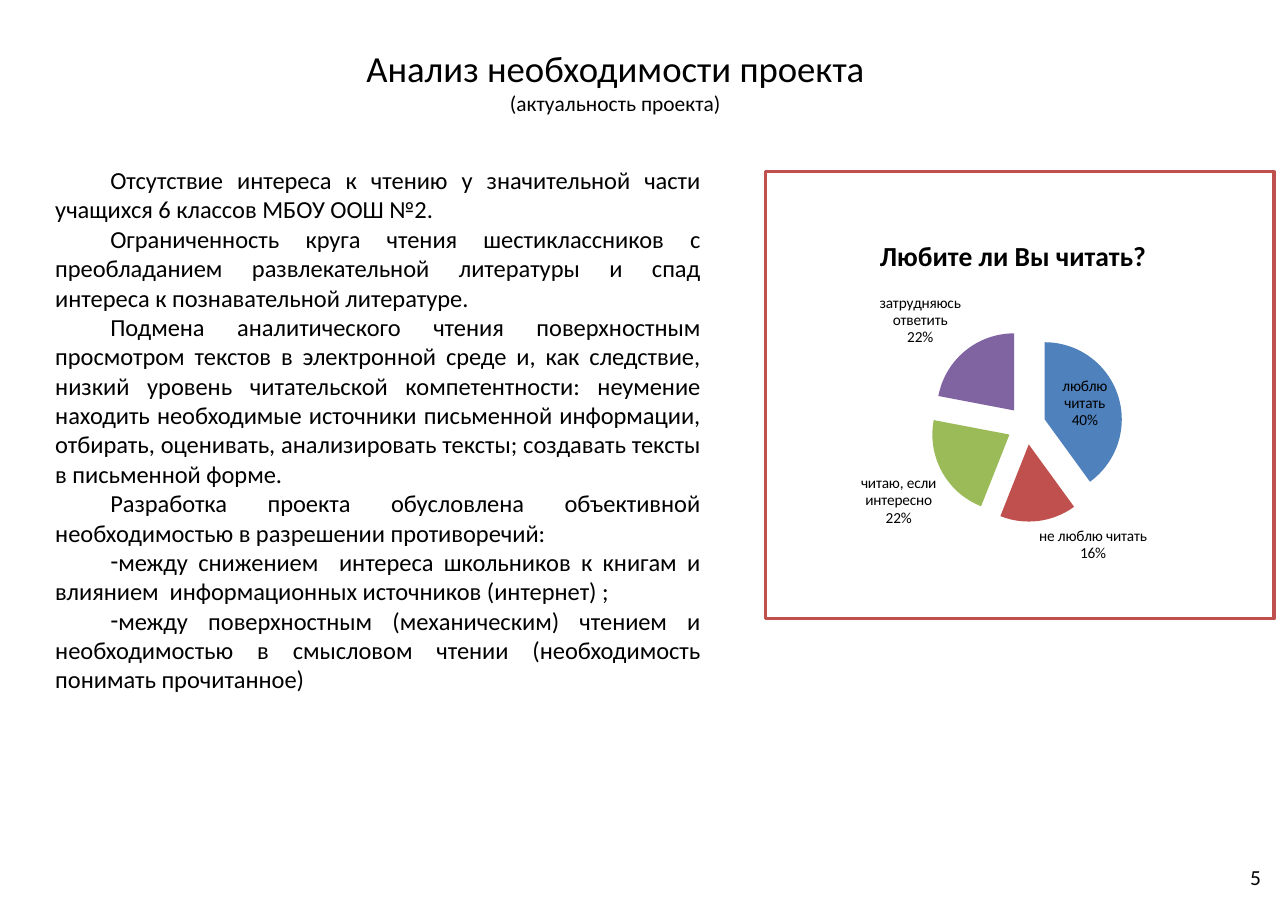
from lxml import etree
from pptx import Presentation
from pptx import util as u
from pptx.chart import data
from pptx.dml.color import RGBColor
from pptx.enum import chart as charts, shapes, text
from pptx.oxml import ns

FONT = "Calibri"
COLORS = {"text": "000000", "panel": "FFFFFF", "frame": "C0504D"}
ANSWERS = [
    ("люблю читать", 40, "4F81BD"),
    ("не люблю читать", 16, "C0504D"),
    ("читаю, если интересно", 22, "9BBB59"),
    ("затрудняюсь ответить", 22, "8064A2"),
]
REASONS = [
    "Отсутствие интереса к чтению у значительной части учащихся 6 классов МБОУ ООШ №2.",
    "Ограниченность круга чтения шестиклассников с преобладанием развлекательной "
    "литературы и спад интереса к познавательной литературе.",
    "Подмена аналитического чтения поверхностным просмотром текстов в электронной среде "
    "и, как следствие, низкий уровень читательской компетентности: неумение находить "
    "необходимые источники письменной информации, отбирать, оценивать, анализировать "
    "тексты; создавать тексты в письменной форме.",
    "Разработка проекта обусловлена объективной необходимостью в разрешении противоречий:",
]
CONTRADICTIONS = [
    "между снижением  интереса школьников к книгам и влиянием  информационных "
    "источников (интернет) ;",
    "между поверхностным (механическим) чтением и необходимостью в смысловом чтении "
    "(необходимость понимать прочитанное)",
]


def style(font, size):
    font.name, font.size = FONT, u.Pt(size)
    font.color.rgb = RGBColor.from_string(COLORS["text"])


def set_layout(parent, index, **fractions):
    """Place a chart part by fractions of the chart area."""
    for old in parent.findall(ns.qn("c:layout")):
        parent.remove(old)
    layout = etree.Element(ns.qn("c:layout"))
    manual = etree.SubElement(layout, ns.qn("c:manualLayout"))
    if "w" in fractions:
        etree.SubElement(manual, ns.qn("c:layoutTarget")).set("val", "inner")
    for axis in "xy":
        etree.SubElement(manual, ns.qn(f"c:{axis}Mode")).set("val", "edge")
    for key, value in fractions.items():
        etree.SubElement(manual, ns.qn(f"c:{key}")).set("val", str(value))
    parent.insert(index, layout)


deck = Presentation()
deck.slide_width, deck.slide_height = u.Cm(29.7), u.Cm(21)
page = deck.slides.add_slide(deck.slide_layouts[1])
title, body = page.placeholders

# Title
title.left, title.top, title.width, title.height = u.Cm(0.89), u.Cm(0.84), u.Cm(26.6), u.Cm(2.03)
heading = title.text_frame.paragraphs[0]
heading.alignment = text.PP_ALIGN.CENTER
for line, size in [("Анализ необходимости проекта", 24), ("(актуальность проекта)", 14)]:
    if heading.runs:
        heading.add_line_break()
    span = heading.add_run()
    span.text = line
    style(span.font, size)

# Reasons
body.left, body.top, body.width, body.height = u.Cm(1.02), u.Cm(3.68), u.Cm(15.4), u.Cm(13.72)
frame = body.text_frame
frame.auto_size = text.MSO_AUTO_SIZE.NONE
for number, reason in enumerate(REASONS + CONTRADICTIONS):
    para = frame.add_paragraph() if number else frame.paragraphs[0]
    para.text = reason
    para.alignment = text.PP_ALIGN.JUSTIFY
    para.space_before = u.Pt(0)
    style(para.font, 16)
    props = para._p.get_or_add_pPr()
    props.set("marL", "0")
    props.set("indent", str(u.Cm(1.27)))
    if number < len(REASONS):
        bullet = etree.Element(ns.qn("a:buNone"))
    else:
        bullet = etree.Element(ns.qn("a:buChar"), char="-")
    props.insert_element_before(bullet, "a:tabLst", "a:defRPr", "a:extLst")

# Survey panel
panel = page.shapes.add_shape(shapes.MSO_SHAPE.RECTANGLE,
                              u.Cm(17.65), u.Cm(3.96), u.Cm(11.73), u.Cm(10.31))
panel.shadow.inherit = False
panel.fill.solid()
panel.fill.fore_color.rgb = RGBColor.from_string(COLORS["panel"])
panel.line.color.rgb = RGBColor.from_string(COLORS["frame"])
panel.line.width = u.Pt(2)

# Survey chart
survey = data.CategoryChartData(number_format="0")
survey.categories = [answer for answer, _, _ in ANSWERS]
survey.add_series("Series 1", [share for _, share, _ in ANSWERS])
chart = page.shapes.add_chart(charts.XL_CHART_TYPE.PIE, u.Cm(17), u.Cm(4.8),
                              u.Cm(12.7), u.Cm(8.94), survey).chart
style(chart.font, 10)
chart.has_legend = False
chart.has_title = True
question = chart.chart_title.text_frame.paragraphs[0]
question.text = "Любите ли Вы читать?"
style(question.font, 18)
question.font.bold = True
set_layout(chart._chartSpace.find(".//" + ns.qn("c:title")), 1, x=0.25, y=0.06)
set_layout(chart._chartSpace.find(".//" + ns.qn("c:plotArea")), 0, x=0.35, y=0.31, w=0.35, h=0.5)

plot = chart.plots[0]
plot.vary_by_categories = True
series = plot.series[0]
explosion = etree.Element(ns.qn("c:explosion"), val="25")
series._element.find(ns.qn("c:tx")).addnext(explosion)
for number, (_, _, color) in enumerate(ANSWERS):
    fill = series.points[number].format.fill
    fill.solid()
    fill.fore_color.rgb = RGBColor.from_string(color)
labels = series.data_labels
labels.show_category_name = labels.show_percentage = True
labels.show_value = False
labels.number_format, labels.number_format_is_linked = "0%", False
labels.position = charts.XL_LABEL_POSITION.BEST_FIT
style(labels.font, 10)

# Page number
box = page.shapes.add_textbox(u.Cm(22.4), u.Cm(19.66), u.Cm(6.93), u.Cm(1.12))
box.text_frame.word_wrap = True
box.text_frame.vertical_anchor = text.MSO_ANCHOR.MIDDLE
para = box.text_frame.paragraphs[0]
para.text = "5"
para.alignment = text.PP_ALIGN.RIGHT
style(para.font, 14)

deck.save("out.pptx")
